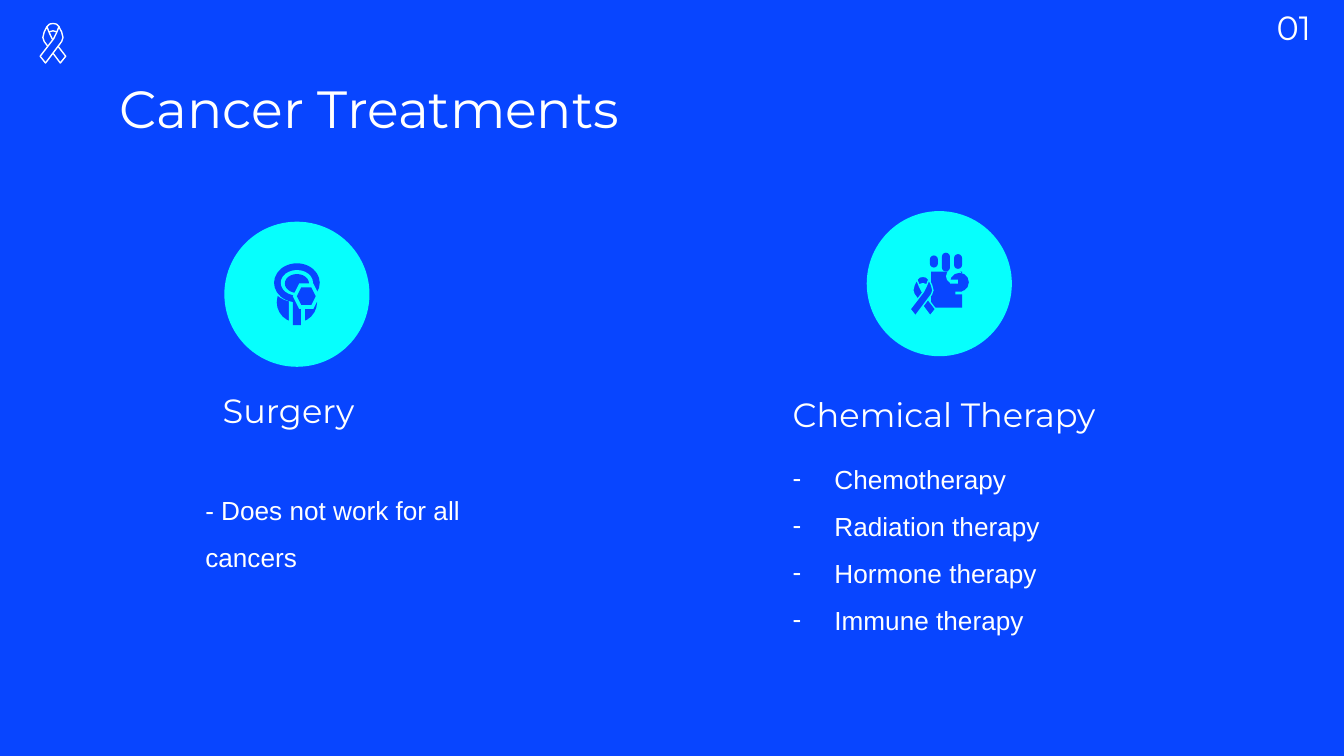
"""Builds the Cancer Treatments slide, with icons layered from simple shapes."""
from lxml.etree import SubElement
from pptx import Presentation
from pptx.dml.color import RGBColor
from pptx.enum.shapes import MSO_SHAPE as Preset
from pptx.enum.text import MSO_ANCHOR as Anchor
from pptx.oxml.ns import qn
from pptx.util import Cm, Pt

BLUE, CYAN, WHITE = "0845FF", "06FFFD", "FFFFFF"
OVAL, BAR, ROUNDED, HEXAGON = (Preset.OVAL, Preset.RECTANGLE,
                               Preset.ROUNDED_RECTANGLE, Preset.HEXAGON)
GRID = Cm(2.54) / 100


def paint(fill, color):
    fill.solid()
    fill.fore_color.rgb = RGBColor.from_string(color)


def place(left, top, x, y):
    return int(Cm(left) + x * GRID), int(Cm(top) + y * GRID)


deck = Presentation()
deck.slide_width, deck.slide_height = Cm(25.4), Cm(14.29)
slide = deck.slides.add_slide(deck.slide_layouts[6])
paint(slide.background.fill, BLUE)
shapes = slide.shapes

disc = (OVAL, 0, 0, 108, 108, CYAN)
surgery_layers = [
    disc,
    (OVAL, 39, 45, 30, 30, BLUE),
    (OVAL, 34, 28, 40, 32, CYAN),
    (BAR, 48, 57, 12, 20, CYAN),
    (OVAL, 37, 31, 34, 29, BLUE),
    (BAR, 51, 57, 6, 20, BLUE),
    (OVAL, 42, 36, 24, 19, CYAN),
    (OVAL, 45, 39, 18, 14, BLUE),
    (HEXAGON, 51, 46, 20, 19, CYAN),
    (HEXAGON, 54, 49, 14, 13, BLUE),
]
fingers = [(ROUNDED, 47, 33, 6, 9, BLUE), (ROUNDED, 56, 31, 6, 14, BLUE),
           (ROUNDED, 65, 32, 6, 11, BLUE)]
palm_and_thumb = [
    (BAR, 48, 45, 23, 27, BLUE),
    (ROUNDED, 59, 43, 12, 11, CYAN),
    (ROUNDED, 62, 46, 14, 14, BLUE),
    (BAR, 62, 51, 6, 3, CYAN),
    (BAR, 66, 60, 6, 2, CYAN),
]
icons = [(16.38, 3.99, [disc, *fingers, *palm_and_thumb]), (4.24, 4.19, surgery_layers)]
for left, top, layers in icons:
    for preset, x, y, width, height, color in layers:
        layer = shapes.add_shape(preset, *place(left, top, x, y),
                                 int(width * GRID), int(height * GRID))
        if preset == ROUNDED:
            layer.adjustments[0] = 0.5
        layer.shadow.inherit = False
        paint(layer.fill, color)
        layer.line.fill.background()

ribbon_width = 19
back_strand = [(5, 3), (3, 7), (2, 11), (3, 14), (6, 18), (15, 30),
               (19, 25), (9, 12), (7, 8)]
front_strand = [(ribbon_width - x, y) for x, y in back_strand]
bow = [(5, 3), (7, 1), (9.5, 0.5), (12, 1), (14, 3), (13, 7), (9.5, 6), (6, 7)]
ribbons = [(0.76, 0.43, WHITE), (17.2, 5.21, CYAN)]
for left, top, edge in ribbons:
    for part in (bow, back_strand, front_strand):
        start, *corners = [place(left, top, x, y) for x, y in part]
        builder = shapes.build_freeform(*start)
        builder.add_line_segments(corners)
        band = builder.convert_to_shape()
        band.shadow.inherit = False
        paint(band.fill, BLUE)
        paint(band.line.fill, edge)
        band.line.width = Pt(0.75)

therapies = ["Chemotherapy", "Radiation therapy", "Hormone therapy", "Immune therapy"]
heading, body = ("Montserrat", 18, 1), ("Arial", 14, 1.5)
texts = [
    (2.01, 1.24, 21.41, 1.6, ["Cancer Treatments"], ("Montserrat", 28, 1)),
    (3.96, 7.36, 6.73, 0.79, ["Surgery"], heading),
    (3.63, 8.41, 6.73, 3.05, ["- Does not work for all cancers"], body),
    (14.73, 7.36, 7.06, 0.94, ["Chemical Therapy"], heading),
    (14.73, 8.71, 6.73, 3.05, therapies, body),
    (23.88, -0.21, 1.52, 1.45, ["01"], heading),
]
for left, top, width, height, lines, (font, size, spacing) in texts:
    frame = shapes.add_textbox(Cm(left), Cm(top), Cm(width), Cm(height)).text_frame
    frame.word_wrap = True
    frame.vertical_anchor = Anchor.MIDDLE
    frame.margin_left = frame.margin_right = frame.margin_top = frame.margin_bottom = Cm(0.25)
    for index, line in enumerate(lines):
        paragraph = frame.add_paragraph() if index else frame.paragraphs[0]
        paragraph.line_spacing = spacing
        run = paragraph.add_run()
        run.text = line
        run.font.name, run.font.size = font, Pt(size)
        paint(run.font.fill, WHITE)
        if lines is therapies:
            properties = paragraph._p.get_or_add_pPr()
            properties.set("marL", str(Cm(0.79)))
            properties.set("indent", str(-Cm(0.79)))
            SubElement(SubElement(properties, qn("a:buClr")), qn("a:srgbClr")).set("val", WHITE)
            SubElement(properties, qn("a:buFont")).set("typeface", font)
            SubElement(properties, qn("a:buChar")).set("char", "-")

deck.save("out.pptx")
